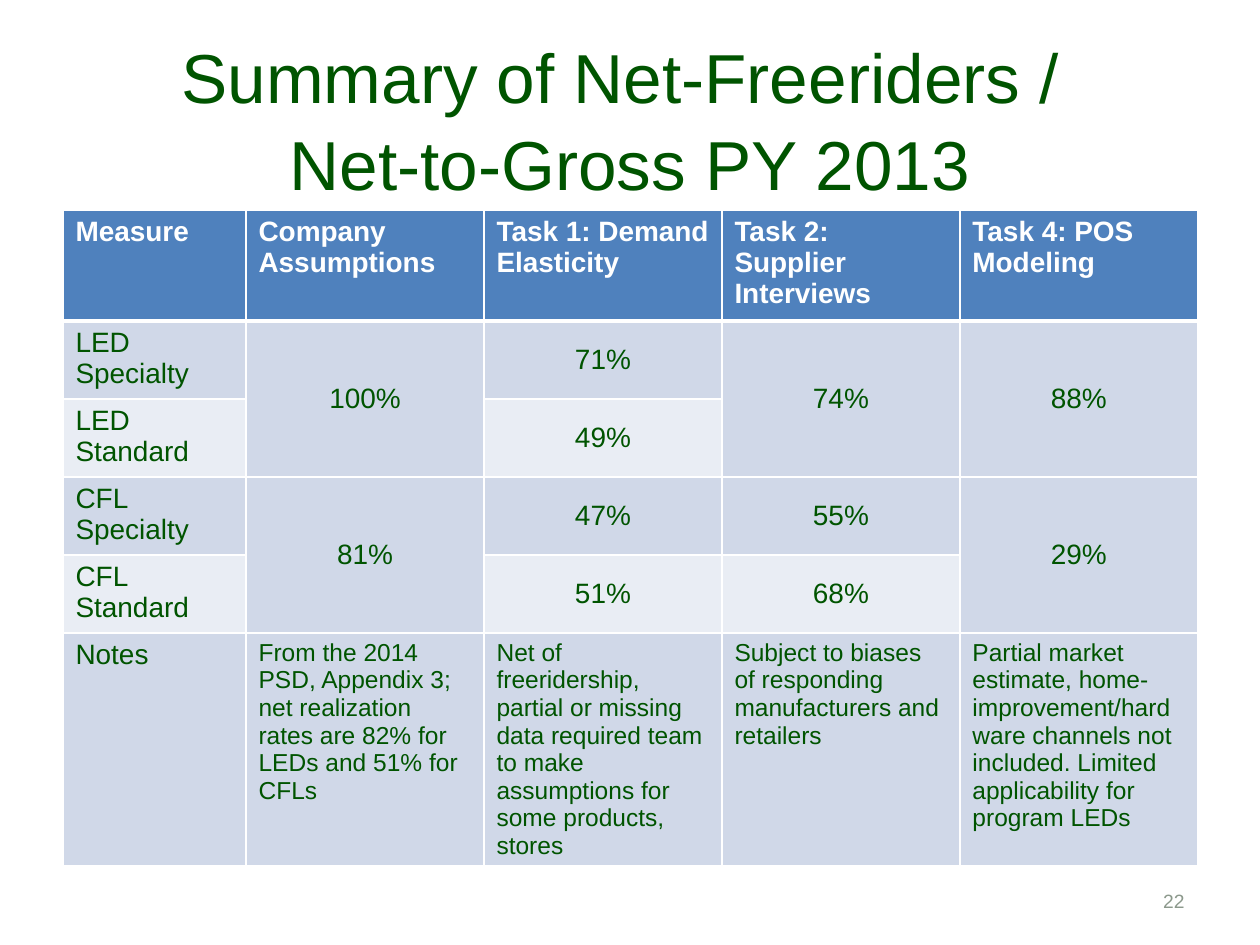
from lxml.etree import SubElement
from pptx import Presentation
from pptx.dml.color import RGBColor
from pptx.enum.text import MSO_ANCHOR, MSO_AUTO_SIZE, PP_ALIGN
from pptx.oxml.ns import qn
from pptx.util import Emu, Pt

GREEN, WHITE, GREY = "005400", "FFFFFF", "8C998C"
BLUE, DARK, LIGHT = "4F81BD", "D0D8E8", "E9EDF4"

COLS = [183, 238, 238, 238, 238]
ROWS = [111, 78, 78, 78, 78, 229]
HEADS = ["Measure", "Company Assumptions", "Task 1: Demand Elasticity",
         "Task 2: Supplier Interviews", "Task 4: POS Modeling"]
# None marks a cell merged into the one above
BODY = [
    ["LED Specialty", "100%", "71%", "74%", "88%"],
    ["LED Standard", None, "49%", None, None],
    ["CFL Specialty", "81%", "47%", "55%", "29%"],
    ["CFL Standard", None, "51%", "68%", None],
]
NOTES = [
    "Notes",
    "From the 2014 PSD, Appendix 3; net realization rates are 82% for LEDs "
    "and 51% for CFLs",
    "Net of freeridership, partial or missing data required team to make "
    "assumptions for some products, stores",
    "Subject to biases of responding manufacturers and retailers",
    "Partial market estimate, home-improvement/hardware channels not "
    "included. Limited applicability for program LEDs",
]


def px(n):
    return Emu(round(n * 914400 / 126))


def color(code):
    return RGBColor.from_string(code)


def add_run(para, text, size, code, bold=False):
    run = para.add_run()
    run.text = text
    font = run.font
    font.name, font.size, font.bold = "Arial", Pt(size), bold
    font.color.rgb = color(code)


def place(shape, left, top, width, height):
    shape.left, shape.top = px(left), px(top)
    shape.width, shape.height = px(width), px(height)


def set_frame(frame):
    frame.word_wrap = True
    frame.auto_size = MSO_AUTO_SIZE.NONE
    frame.vertical_anchor = MSO_ANCHOR.MIDDLE


def add_title(slide, lines):
    title = slide.shapes.title
    place(title, 63, 38, 1134, 158)
    set_frame(title.text_frame)
    para = title.text_frame.paragraphs[0]
    para.alignment = PP_ALIGN.CENTER
    para.line_spacing = 1.05
    for i, line in enumerate(lines):
        if i:
            para.add_line_break()
        add_run(para, line, 39.6, GREEN)


def set_edges(cell, low):
    """Draw white borders; low is the width of the bottom one."""
    props = cell._tc.get_or_add_tcPr()
    for i, (side, width) in enumerate(
            [("lnL", 1), ("lnR", 1), ("lnT", 1), ("lnB", low)]):
        line = props.makeelement(qn("a:" + side), {"w": str(Pt(width))})
        fill = SubElement(line, qn("a:solidFill"))
        SubElement(fill, qn("a:srgbClr"), val=WHITE)
        props.insert(i, line)


def fill_cell(cell, text, back, size, code=GREEN, bold=False, mid=False):
    cell.fill.solid()
    cell.fill.fore_color.rgb = color(back)
    para = cell.text_frame.paragraphs[0]
    if mid:
        cell.vertical_anchor = MSO_ANCHOR.MIDDLE
        para.alignment = PP_ALIGN.CENTER
    if text:
        add_run(para, text, size, code, bold)


def add_grid(slide):
    frame = slide.shapes.add_table(len(ROWS), len(COLS), px(63), px(210),
                                   px(sum(COLS)), px(sum(ROWS)))
    table = frame.table
    for col, width in zip(table.columns, COLS):
        col.width = px(width)
    for row, height in zip(table.rows, ROWS):
        row.height = px(height)

    for r, texts in enumerate([HEADS, *BODY, NOTES]):
        for c, text in enumerate(texts):
            cell = table.cell(r, c)
            set_edges(cell, 1 if r else 3)
            if r == 0:
                fill_cell(cell, text, BLUE, 16, WHITE, bold=True)
            elif texts is NOTES:
                fill_cell(cell, text, DARK, 14 if c else 16)
            else:
                fill_cell(cell, text, DARK if r % 2 else LIGHT, 16, mid=c > 0)
            if text is None:
                table.cell(r - 1, c).merge(cell)


def add_page(slide, text):
    box = slide.shapes.add_textbox(0, 0, 0, 0)
    place(box, 903, 876, 294, 50)
    set_frame(box.text_frame)
    para = box.text_frame.paragraphs[0]
    para.alignment = PP_ALIGN.RIGHT
    add_run(para, text, 11, GREY)


def main():
    deck = Presentation()
    deck.slide_width, deck.slide_height = px(1260), px(945)
    slide = deck.slides.add_slide(deck.slide_layouts[5])
    add_title(slide, ["Summary of Net-Freeriders / ", "Net-to-Gross PY 2013"])
    add_grid(slide)
    add_page(slide, "22")
    deck.save("out.pptx")


if __name__ == "__main__":
    main()
